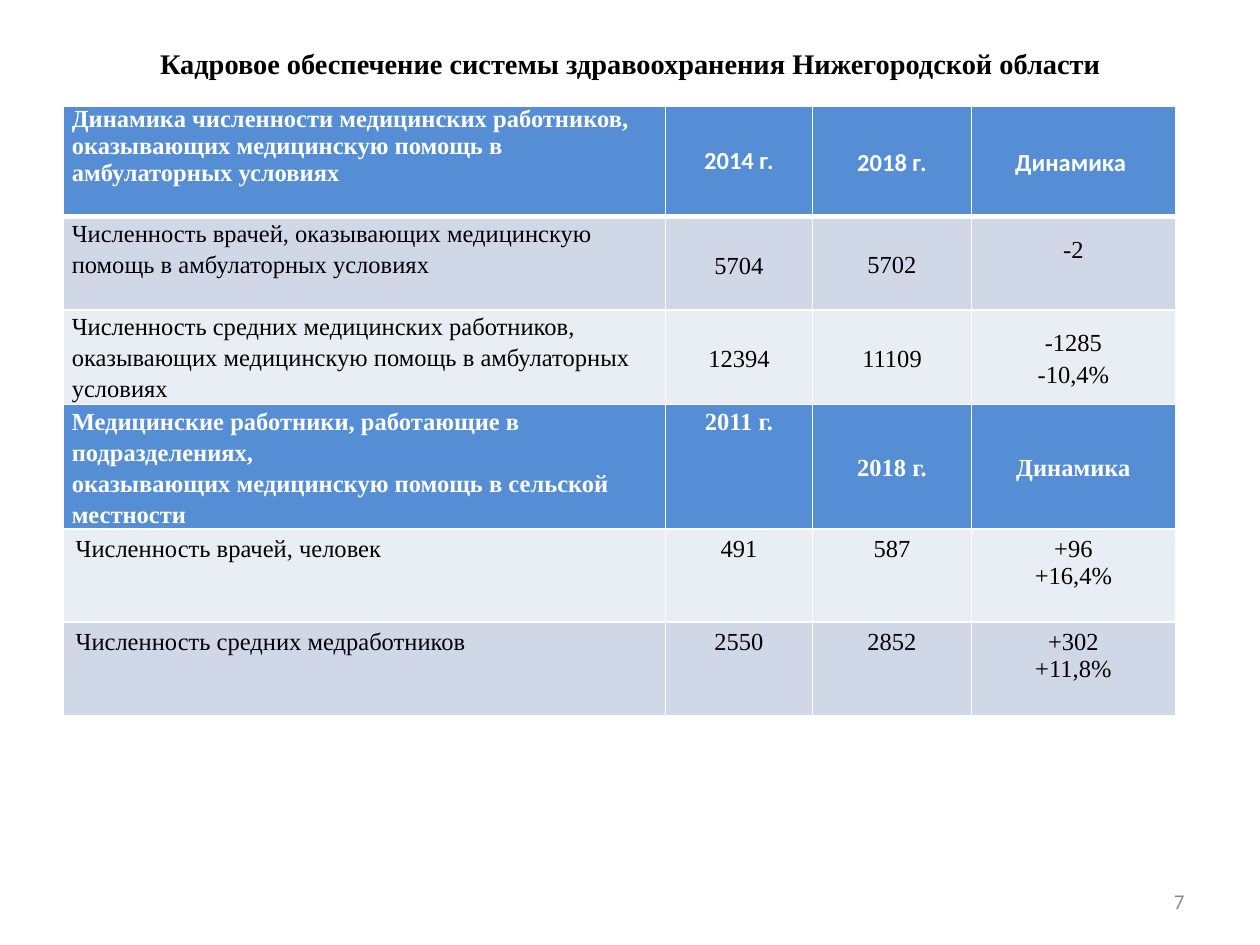
from dataclasses import dataclass

from lxml.etree import SubElement
from pptx import Presentation
from pptx.dml.color import RGBColor
from pptx.enum.text import MSO_ANCHOR as Anchor, PP_ALIGN as Align
from pptx.oxml.ns import qn
from pptx.util import Inches, Pt

SLIDE_W, SLIDE_H = Inches(10), Inches(7.5)
SERIF, SANS = "Times New Roman", "Calibri"
WHITE, BLACK, GREY = "FFFFFF", "000000", "8C8C8C"
BLUE, DARK_BAND, LIGHT_BAND = "558ED5", "D0D8E8", "E9EDF4"
TOP, MIDDLE = Anchor.TOP, Anchor.MIDDLE
COLUMN_WIDTHS = (4.78, 1.17, 1.26, 1.62)
TIGHT, ROOMY = (0.07, 0), (0.1, 0.05)  # side and top/bottom cell margins


@dataclass
class Entry:
    text: str
    anchor: Anchor = MIDDLE
    spacing: float = 1.15
    font: str = SERIF
    extra_top: float = 0
    extra_bottom: float = 0


@dataclass
class Row:
    height: float
    fill: str
    entries: tuple[Entry, ...]
    margins: tuple[float, float] = TIGHT
    bottom_line: float = 1

    @property
    def is_heading(self) -> bool:
        return self.fill == BLUE


def plain_row(fill: str, *texts: str) -> Row:
    """A top-aligned, single-spaced row with the wider margins."""
    return Row(0.74, fill, tuple(Entry(text, TOP, 1) for text in texts), ROOMY)


ROWS = (
    Row(0.88, BLUE, (
        Entry("Динамика численности медицинских работников, оказывающих "
              "медицинскую помощь в амбулаторных условиях", TOP, 1),
        Entry("2014 г.", spacing=1, font=SANS),
        Entry("2018 г.", font=SANS),
        Entry("Динамика ", font=SANS),
    ), bottom_line=3),
    Row(0.74, DARK_BAND, (
        Entry("Численность врачей, оказывающих медицинскую помощь "
              "в амбулаторных условиях", TOP),
        Entry("5704", TOP, extra_top=0.25),
        Entry("5702"),
        Entry("-2", extra_bottom=0.24),
    )),
    Row(0.75, LIGHT_BAND, (
        Entry("Численность средних медицинских работников, оказывающих "
              "медицинскую помощь в амбулаторных условиях", TOP),
        Entry("12394", TOP, extra_top=0.25),
        Entry("11109"),
        Entry("-1285\n-10,4%"),
    )),
    Row(0.98, BLUE, (
        Entry("Медицинские работники, работающие в подразделениях, \v"
              "оказывающих медицинскую помощь в сельской местности", TOP),
        Entry("2011 г.", TOP),
        Entry("2018 г."),
        Entry("Динамика"),
    )),
    plain_row(LIGHT_BAND, "Численность врачей, человек", "491", "587", "+96\n+16,4%"),
    plain_row(DARK_BAND, "Численность средних медработников", "2550", "2852",
              "+302\n+11,8%"),
)


def color(hex_value: str) -> RGBColor:
    return RGBColor.from_string(hex_value)


def format_text(frame, font: str, size: float, hex_value: str, bold: bool,
                align: Align, spacing: float = 1) -> None:
    for paragraph in frame.paragraphs:
        paragraph.alignment = align
        paragraph.line_spacing = spacing
        for run in paragraph.runs:
            run.font.name, run.font.size, run.font.bold = font, Pt(size), bold
            run.font.color.rgb = color(hex_value)


def draw_borders(cell, top: float, bottom: float) -> None:
    properties = cell._tc.get_or_add_tcPr()
    for side, width in (("lnL", 1), ("lnR", 1), ("lnT", top), ("lnB", bottom)):
        line = SubElement(properties, qn(f"a:{side}"), w=str(Pt(width)))
        SubElement(SubElement(line, qn("a:solidFill")), qn("a:srgbClr"), val=WHITE)


def fill_cell(cell, entry: Entry, row: Row, align: Align, top_line: float) -> None:
    side, edge = row.margins
    cell.margin_left = cell.margin_right = Inches(side)
    cell.margin_top = Inches(edge + entry.extra_top)
    cell.margin_bottom = Inches(edge + entry.extra_bottom)
    cell.vertical_anchor = entry.anchor
    cell.text_frame.text = entry.text
    format_text(cell.text_frame, entry.font, 14, WHITE if row.is_heading else BLACK,
                row.is_heading, align, entry.spacing)
    draw_borders(cell, top_line, row.bottom_line)
    cell.fill.solid()
    cell.fill.fore_color.rgb = color(row.fill)


def add_staff_table(slide) -> None:
    total_height = sum(row.height for row in ROWS)
    table = slide.shapes.add_table(
        len(ROWS), len(COLUMN_WIDTHS), int(SLIDE_W * 0.05), Inches(0.84),
        Inches(sum(COLUMN_WIDTHS)), Inches(total_height)).table
    for column, width in zip(table.columns, COLUMN_WIDTHS):
        column.width = Inches(width)
    top_line = 1
    for r, row in enumerate(ROWS):
        table.rows[r].height = Inches(row.height)
        for c, entry in enumerate(row.entries):
            align = Align.CENTER if c else Align.LEFT
            fill_cell(table.cell(r, c), entry, row, align, top_line)
        top_line = row.bottom_line


def add_title(slide) -> None:
    title = slide.shapes.title
    title.left, title.top = int(SLIDE_W * 0.05), int(SLIDE_H * 0.04)
    title.width, title.height = int(SLIDE_W * 0.9), Inches(0.61)
    frame = title.text_frame
    frame.text = "Кадровое обеспечение системы здравоохранения Нижегородской области"
    frame.vertical_anchor = MIDDLE
    frame.margin_bottom = Inches(0.25)
    format_text(frame, SERIF, 16.2, BLACK, True, Align.CENTER)


def add_page_number(slide) -> None:
    frame = slide.shapes.add_textbox(
        Inches(7.17), Inches(6.95), Inches(2.33), Inches(0.4)).text_frame
    frame.word_wrap = True
    frame.vertical_anchor = MIDDLE
    frame.text = "7"
    format_text(frame, SANS, 12, GREY, False, Align.RIGHT)


def main() -> None:
    deck = Presentation()
    deck.slide_width, deck.slide_height = SLIDE_W, SLIDE_H
    slide = deck.slides.add_slide(deck.slide_layouts[5])  # title only
    add_title(slide)
    add_staff_table(slide)
    add_page_number(slide)
    deck.save("out.pptx")


if __name__ == "__main__":
    main()
